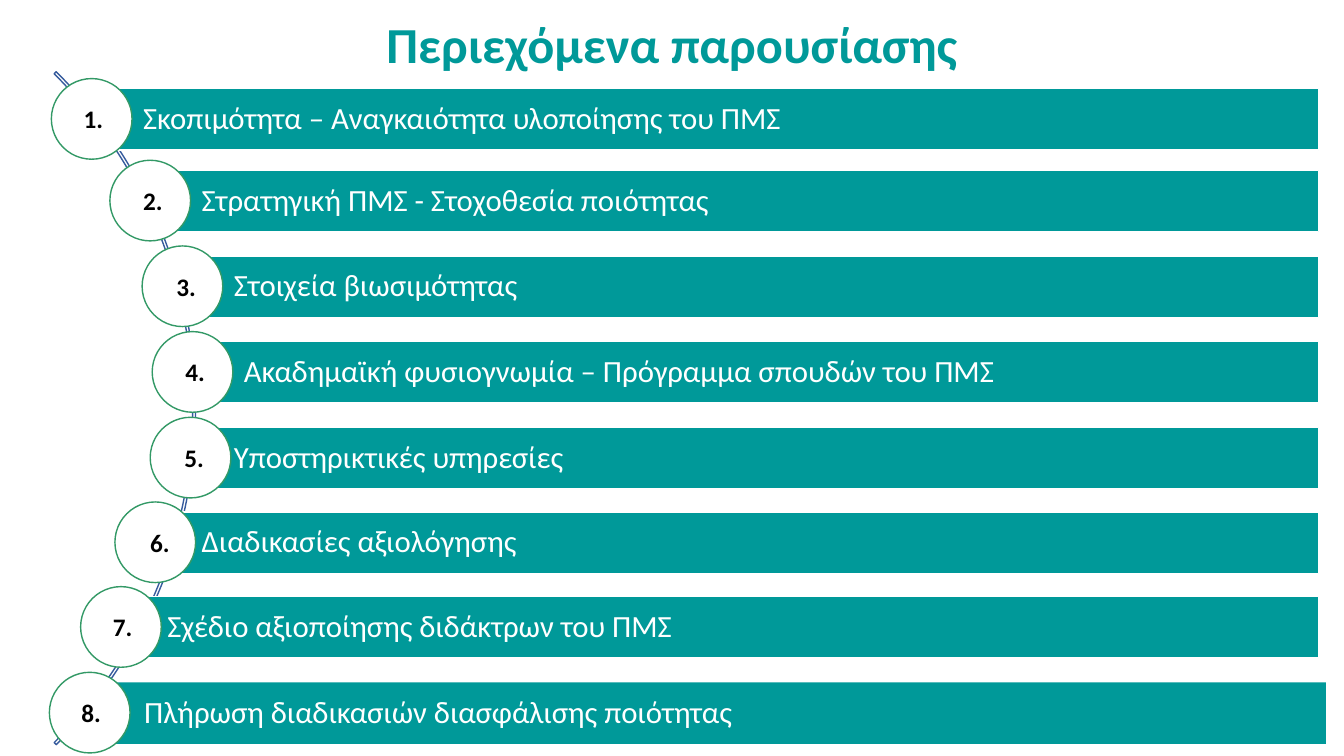
"""Build the slide listing the eight contents of the presentation along an arc."""
from pptx import Presentation
from pptx import util as u
from pptx.dml.color import RGBColor
from pptx.enum import shapes, text

PX = 9144
TEAL = RGBColor(0x00, 0x99, 0x99)
GREEN = RGBColor(0x33, 0x99, 0x66)
BLUE = RGBColor(0x36, 0x5B, 0x9D)
WHITE = RGBColor(0xFF, 0xFF, 0xFF)
BLACK = RGBColor(0x00, 0x00, 0x00)

BAR_HEIGHT = 61
CIRCLE_SIZE = 80
TOPICS = [
    ("Σκοπιμότητα – Αναγκαιότητα υλοποίησης του ΠΜΣ", 91, 88, 51, 73),
    ("Στρατηγική ΠΜΣ - Στοχοθεσία ποιότητας", 149, 169, 109, 132),
    ("Στοιχεία βιωσιμότητας", 181, 254, 141, 165),
    ("Ακαδημαϊκή φυσιογνωμία – Πρόγραμμα σπουδών του ΠΜΣ", 191, 339, 151, 174),
    ("Υποστηρικτικές υπηρεσίες", 181, 424, 149, 173),
    ("Διαδικασίες αξιολόγησης", 149, 508, 114, 139),
    ("Σχέδιο αξιοποίησης διδάκτρων του ΠΜΣ", 115, 592, 80, 102),
    ("Πλήρωση διαδικασιών διασφάλισης ποιότητας", 92, 677, 49, 71),
]


def write(frame, words, size, color, bold=False, align=text.PP_ALIGN.LEFT,
          anchor=text.MSO_ANCHOR.TOP, spacing=1.0, insets=(10, 5, 10, 5),
          wrap=True, fit=text.MSO_AUTO_SIZE.NONE):
    frame.word_wrap = wrap
    frame.auto_size = fit
    frame.vertical_anchor = anchor
    (frame.margin_left, frame.margin_top,
     frame.margin_right, frame.margin_bottom) = [inset * PX for inset in insets]
    paragraph = frame.paragraphs[0]
    paragraph.alignment = align
    paragraph.line_spacing = spacing
    run = paragraph.add_run()
    run.text = words
    run.font.name = "Calibri"
    run.font.size = u.Pt(size)
    run.font.bold = bold
    run.font.color.rgb = color


def draw(kind, left, top, width, height, fill=None, line=None):
    shape = slide.shapes.add_shape(kind, left * PX, top * PX, width * PX, height * PX)
    shape.shadow.inherit = False
    for part, color in ((shape.fill, fill), (shape.line.fill, line)):
        if color is None:
            part.background()
        else:
            part.solid()
            part.fore_color.rgb = color
    if line is not None:
        shape.line.width = u.Pt(1)
    return shape


deck = Presentation()
deck.slide_width = u.Inches(13.33)
deck.slide_height = u.Inches(7.5)
slide = deck.slides.add_slide(deck.slide_layouts[5])

heading = slide.shapes.title
heading.left, heading.top = 0, 0
heading.width, heading.height = deck.slide_width, 75 * PX
write(heading.text_frame, "Περιεχόμενα παρουσίασης", 36, TEAL, bold=True,
      align=text.PP_ALIGN.CENTER, spacing=1.14,
      fit=text.MSO_AUTO_SIZE.SHAPE_TO_FIT_TEXT)

arc = draw(shapes.MSO_SHAPE.BLOCK_ARC, -750, -67, 944, 944, line=BLUE)
for index, angle in enumerate((189, 27, 0.003)):
    arc.adjustments[index] = angle

for number, (topic, bar_left, bar_top, circle_left, number_left) in enumerate(TOPICS, 1):
    is_last = number == len(TOPICS)
    bar_right = 1315 if is_last else 1308
    bar = draw(shapes.MSO_SHAPE.RECTANGLE, bar_left, bar_top, bar_right - bar_left,
               BAR_HEIGHT, fill=TEAL, line=None if is_last else WHITE)
    write(bar.text_frame, topic, 22, WHITE, anchor=text.MSO_ANCHOR.MIDDLE,
          spacing=0.9, insets=(51, 6, 6, 6))
    draw(shapes.MSO_SHAPE.OVAL, circle_left, bar_top - 10, CIRCLE_SIZE, CIRCLE_SIZE,
         fill=WHITE, line=GREEN)
    label = slide.shapes.add_textbox(number_left * PX, (bar_top + 10) * PX,
                                     39 * PX, 40 * PX)
    write(label.text_frame, f"{number}.", 18, BLACK, bold=True, wrap=False,
          fit=text.MSO_AUTO_SIZE.SHAPE_TO_FIT_TEXT)

deck.save("out.pptx")
